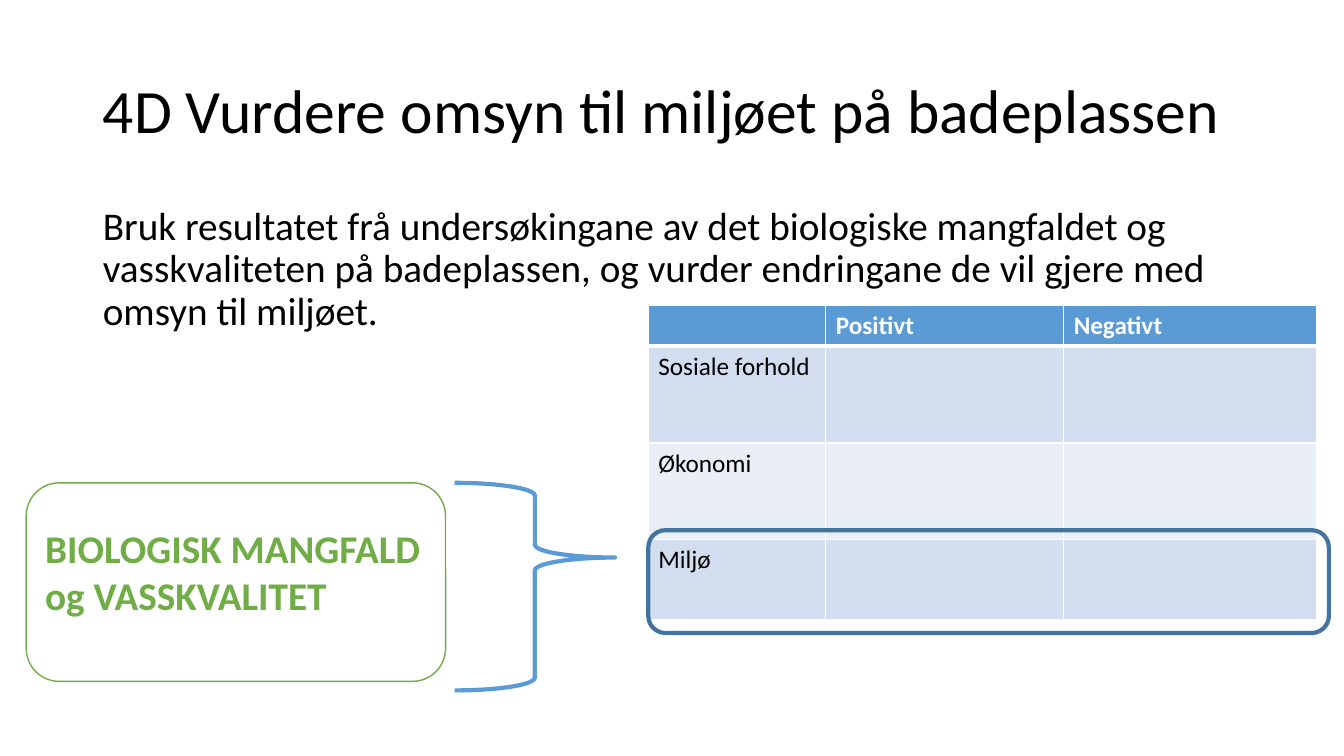
"""Builds the slide on weighing environmental concerns at the bathing place."""
from dataclasses import dataclass

from lxml.etree import SubElement
from pptx import Presentation
from pptx.dml.color import RGBColor
from pptx.enum.shapes import MSO_SHAPE as Preset
from pptx.enum.text import MSO_ANCHOR as Anchor, MSO_AUTO_SIZE as AutoSize, PP_ALIGN as Align
from pptx.oxml import parse_xml
from pptx.oxml.ns import nsdecls, qn
from pptx.util import Emu, Pt

EMU_PER_PX = 9144
FONT = "Calibri"
COLOURS = {
    "black": "000000",
    "white": "FFFFFF",
    "blue": "5B9BD5",
    "dark blue": "43739E",
    "green": "70AD47",
    "dark band": "D2DEEF",
    "light band": "EAEFF7",
}


@dataclass(frozen=True)
class Box:
    left: int
    top: int
    width: int
    height: int

    def emu(self) -> tuple:
        return tuple(px(n) for n in (self.left, self.top, self.width, self.height))


@dataclass(frozen=True)
class Outline:
    preset: Preset
    box: Box
    colour: str
    weight: int
    adjustments: tuple = ()


@dataclass(frozen=True)
class Row:
    height: int
    texts: tuple
    fill: str
    colour: str = "black"
    bold: bool = False
    top_border: int = 1
    bottom_border: int = 1


TITLE_BOX = Box(92, 40, 1150, 145)
BODY_BOX = Box(92, 200, 1150, 476)
TABLE_BOX = Box(643, 303, 663, 311)
LABEL_BOX = Box(35, 515, 403, 135)
COLUMN_WIDTHS = (176, 236, 251)
ROWS = (
    Row(40, ("", "Positivt", "Negativt"), "blue", "white", True, bottom_border=3),
    Row(96, ("Sosiale forhold", "", ""), "dark band", top_border=3),
    Row(96, ("Økonomi", "", ""), "light band"),
    Row(79, ("Miljø", "", ""), "dark band"),
)
OUTLINES = (
    Outline(Preset.RIGHT_BRACE, Box(451, 479, 159, 206), "blue", 3, (0.08, 0.36)),
    Outline(Preset.ROUNDED_RECTANGLE, Box(643, 526, 675, 102), "dark blue", 3),
    Outline(Preset.ROUNDED_RECTANGLE, Box(26, 479, 416, 197), "green", 1),
)


def px(length: int) -> Emu:
    return Emu(length * EMU_PER_PX)


def rgb(name: str) -> RGBColor:
    return RGBColor.from_string(COLOURS[name])


def write(frame, text: str, *, size: int, colour: str = "black", bold: bool = False,
          line_spacing: float = 1.0, space_before: int = 0):
    para = frame.paragraphs[0]
    para.alignment = Align.LEFT
    para.line_spacing = line_spacing
    para.space_before = Pt(space_before)
    span = para.add_run()
    span.text = text
    span.font.name = FONT
    span.font.size = Pt(size)
    span.font.bold = bold
    span.font.color.rgb = rgb(colour)
    return para


def fill_placeholder(holder, box: Box, text: str, anchor: Anchor, **text_format):
    holder.left, holder.top, holder.width, holder.height = box.emu()
    frame = holder.text_frame
    frame.auto_size = AutoSize.NONE
    frame.vertical_anchor = anchor
    return write(frame, text, line_spacing=0.9, **text_format)


def remove_bullet(para) -> None:
    properties = para._p.get_or_add_pPr()
    properties.set("marL", "0")
    properties.set("indent", "0")
    SubElement(properties, qn("a:buNone"))


def set_borders(cell, row: Row) -> None:
    properties = cell._tc.get_or_add_tcPr()
    weights = {"L": 1, "R": 1, "T": row.top_border, "B": row.bottom_border}
    for index, (side, weight) in enumerate(weights.items()):
        properties.insert(index, parse_xml(
            f'<a:ln{side} {nsdecls("a")} w="{Pt(weight)}"><a:solidFill>'
            f'<a:srgbClr val="{COLOURS["white"]}"/></a:solidFill></a:ln{side}>'))


def add_assessment_table(page) -> None:
    table = page.shapes.add_table(len(ROWS), len(COLUMN_WIDTHS), *TABLE_BOX.emu()).table
    table.first_row = table.horz_banding = False
    for column, width in zip(table.columns, COLUMN_WIDTHS):
        column.width = px(width)
    for table_row, row in zip(table.rows, ROWS):
        table_row.height = px(row.height)
        for cell, text in zip(table_row.cells, row.texts):
            cell.fill.solid()
            cell.fill.fore_color.rgb = rgb(row.fill)
            set_borders(cell, row)
            if text:
                write(cell.text_frame, text, size=18, colour=row.colour, bold=row.bold)


def add_outline(page, outline: Outline) -> None:
    shape = page.shapes.add_shape(outline.preset, *outline.box.emu())
    shape.shadow.inherit = False
    shape.fill.background()
    shape.line.color.rgb = rgb(outline.colour)
    shape.line.width = Pt(outline.weight)
    for index, value in enumerate(outline.adjustments):
        shape.adjustments[index] = value


def add_label(page) -> None:
    frame = page.shapes.add_textbox(*LABEL_BOX.emu()).text_frame
    frame.word_wrap = True
    write(frame, "BIOLOGISK MANGFALD og VASSKVALITET", size=28, colour="green", bold=True)


def main() -> None:
    deck = Presentation()
    deck.slide_width, deck.slide_height = px(1333), px(750)
    page = deck.slides.add_slide(deck.slide_layouts[1])
    fill_placeholder(page.shapes.title, TITLE_BOX,
                     "4D Vurdere omsyn til miljøet på badeplassen", Anchor.MIDDLE, size=44)
    task = fill_placeholder(
        page.placeholders[1], BODY_BOX,
        "Bruk resultatet frå undersøkingane av det biologiske mangfaldet og vasskvaliteten "
        "på badeplassen, og vurder endringane de vil gjere med omsyn til miljøet.",
        Anchor.TOP, size=28, space_before=10)
    remove_bullet(task)
    add_assessment_table(page)
    for outline in OUTLINES:
        add_outline(page, outline)
    add_label(page)
    deck.save("out.pptx")


if __name__ == "__main__":
    main()
